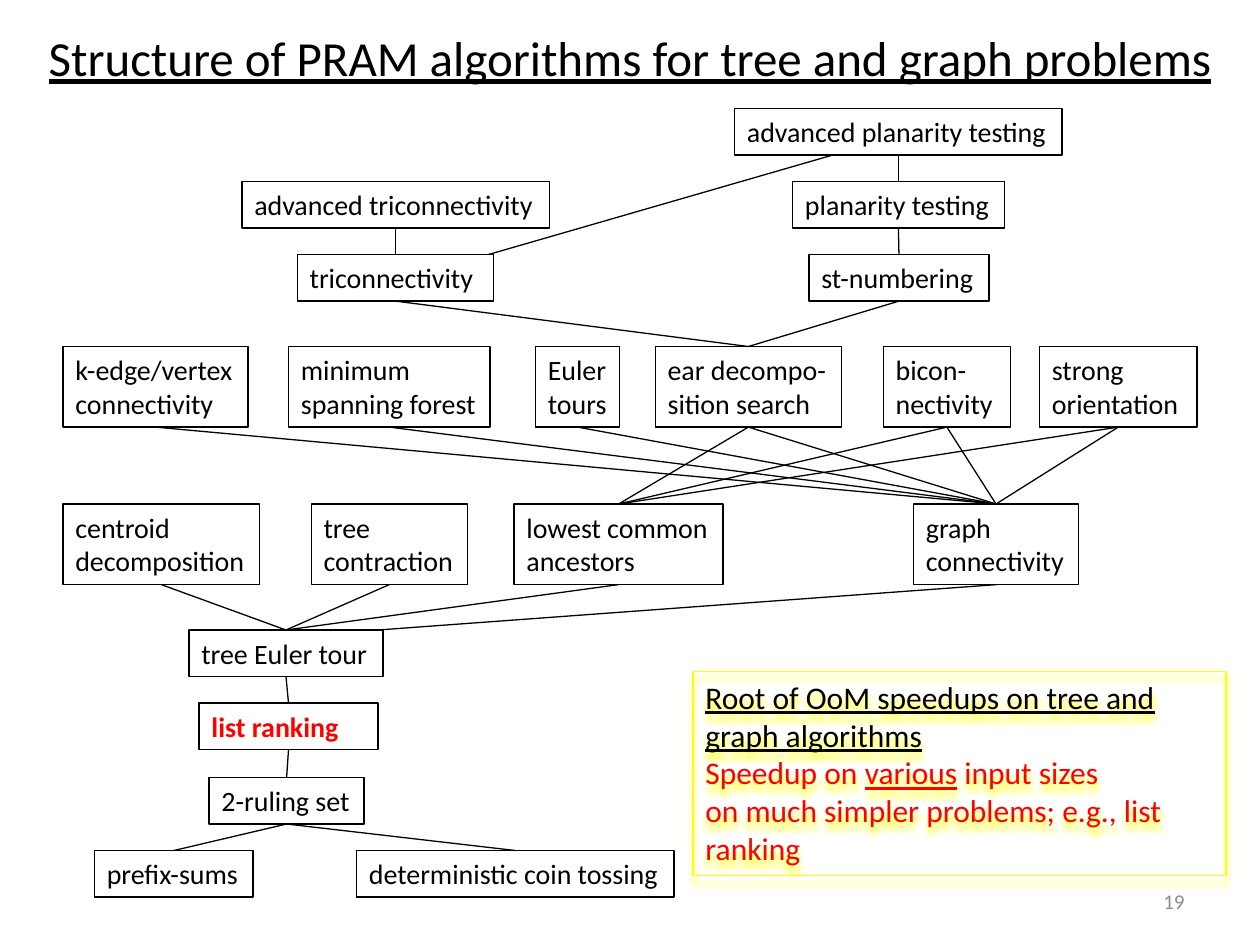
from lxml import etree
from pptx import Presentation
from pptx.dml.color import RGBColor
from pptx.enum import shapes, text
from pptx.oxml import ns
from pptx.util import Inches, Pt

BLACK, WHITE, RED, YELLOW, GRAY = "000000", "FFFFFF", "FF0000", "FFFF00", "8C8C8C"
TITLE = "Structure of PRAM algorithms for tree and graph problems"
ROWS = [
    (0.86, 0.37, [("advplan", "advanced planarity testing", 5.83, 2.6)]),
    (1.44, 0.37, [("advtri", "advanced triconnectivity", 1.92, 2.44),
                  ("plan", "planarity testing", 6.29, 1.68)]),
    (2.02, 0.37, [("tri", "triconnectivity", 2.36, 1.56),
                  ("st", "st-numbering", 6.42, 1.43)]),
    (2.75, 0.64, [("kedge", "k-edge/vertex\nconnectivity", 0.5, 1.47),
                  ("forest", "minimum\vspanning forest", 2.29, 1.6),
                  ("tours", "Euler\vtours", 4.25, 0.67),
                  ("ear", "ear decompo-\vsition search", 5.2, 1.48),
                  ("bicon", "bicon-\vnectivity", 7.01, 1.01),
                  ("strong", "strong\vorientation", 8.25, 1.25)]),
    (4, 0.64, [("centroid", "centroid\vdecomposition", 0.5, 1.56),
               ("tree", "tree\vcontraction", 2.47, 1.24),
               ("lca", "lowest common\vancestors", 4.08, 1.66),
               ("graph", "graph\vconnectivity", 7.25, 1.31)]),
    (5, 0.37, [("tour", "tree Euler tour", 1.5, 1.54)]),
    (5.58, 0.37, [("rank", "list ranking", 1.58, 1.42)]),
    (6.17, 0.37, [("ruling", "2-ruling set", 1.66, 1.23)]),
    (6.75, 0.37, [("sums", "prefix-sums", 0.75, 1.26),
                  ("coin", "deterministic coin tossing", 2.83, 2.52)]),
]
LINKS = {
    "advplan": ["plan"], "advtri": ["tri"], "plan": ["st"],
    "tri": ["ear"], "st": ["ear"],
    "kedge": ["graph"], "forest": ["graph"], "tours": ["graph"],
    "ear": ["graph", "lca"], "bicon": ["graph", "lca"], "strong": ["graph", "lca"],
    "centroid": ["tour"], "tree": ["tour"], "lca": ["tour"],
    "tour": ["rank"], "rank": ["ruling"], "ruling": ["sums", "coin"],
}
SLANTS = [(7.91, 4.64, 3, 5), (6.75, 1.19, 3.67, 2.08)]
NOTE = [
    [("Root of OoM speedups on tree and graph algorithms", BLACK, True)],
    [("Speedup on ", RED, False), ("various", RED, True), (" input sizes", RED, False)],
    [("on much simpler problems; e.g., list ranking", RED, False)],
]
TOP, BOTTOM = 0, 2


def hue(code):
    return RGBColor.from_string(code)


def style(run, size, color, bold=None, under=None):
    font = run.font
    font.name, font.size, font.bold, font.underline = "Calibri", Pt(size), bold, under
    font.color.rgb = hue(color)


def add_box(slide, spot, edge, fill=None):
    box = slide.shapes.add_shape(shapes.MSO_SHAPE.RECTANGLE, *map(Inches, spot))
    box.shadow.inherit = False
    box.line.color.rgb = hue(edge)
    box.line.width = Pt(0.75)
    if fill:
        box.fill.solid()
        box.fill.fore_color.rgb = hue(fill)
    else:
        box.fill.background()
    box.text_frame.word_wrap = True
    box.text_frame.vertical_anchor = text.MSO_ANCHOR.TOP
    return box


def add_node(slide, label, spot, hot):
    box = add_box(slide, spot, BLACK, WHITE)
    box.text_frame.text = label
    for para in box.text_frame.paragraphs:
        para.alignment = text.PP_ALIGN.LEFT
        for run in para.runs:
            style(run, 16, RED if hot else BLACK, bold=hot)
    return box


def add_line(slide, ends=(0, 0, 0, 0)):
    line = slide.shapes.add_connector(shapes.MSO_CONNECTOR.STRAIGHT, *map(Inches, ends))
    line.line.color.rgb = hue(BLACK)
    line.line.width = Pt(0.75)
    etree.SubElement(line._element.spPr, ns.qn("a:effectLst"))
    return line


def add_note(slide):
    note = add_box(slide, (5.5, 5.33, 4.23, 1.62), YELLOW)
    glow = note._element.spPr.find(ns.qn("a:effectLst"))
    shade = etree.SubElement(glow, ns.qn("a:outerShdw"), blurRad=str(Pt(4)),
                             dist=str(Pt(4)), dir="5400000", rotWithShape="0")
    etree.SubElement(shade, ns.qn("a:srgbClr"), val=YELLOW)
    frame = note.text_frame
    for i, parts in enumerate(NOTE):
        para = frame.add_paragraph() if i else frame.paragraphs[0]
        para.alignment = text.PP_ALIGN.LEFT
        for words, color, under in parts:
            run = para.add_run()
            run.text = words
            style(run, 18, color, under=under)


def add_title(slide):
    title = slide.shapes.title
    title.left, title.top, title.width, title.height = map(Inches, (0, 0.17, 10, 0.57))
    frame = title.text_frame
    frame.text = TITLE
    frame.word_wrap = True
    frame.auto_size = text.MSO_AUTO_SIZE.NONE
    frame.vertical_anchor = text.MSO_ANCHOR.TOP
    frame.paragraphs[0].alignment = text.PP_ALIGN.CENTER
    style(frame.paragraphs[0].runs[0], 28, BLACK, under=True)


def add_number(slide):
    frame = slide.shapes.add_textbox(*map(Inches, (7.17, 6.95, 2.33, 0.4))).text_frame
    frame.text = "19"
    frame.word_wrap = True
    frame.vertical_anchor = text.MSO_ANCHOR.MIDDLE
    frame.paragraphs[0].alignment = text.PP_ALIGN.RIGHT
    style(frame.paragraphs[0].runs[0], 12, GRAY)


def main():
    """Build the slide of dependencies among PRAM algorithms."""
    deck = Presentation()
    deck.slide_width, deck.slide_height = Inches(10), Inches(7.5)
    slide = deck.slides.add_slide(deck.slide_layouts[5])
    add_title(slide)
    for ends in SLANTS:
        add_line(slide, ends)
    nodes = {}
    for top, height, items in ROWS:
        for key, label, left, width in items:
            nodes[key] = add_node(slide, label, (left, top, width, height), key == "rank")
    for upper, lowers in LINKS.items():
        for lower in lowers:
            line = add_line(slide)
            line.begin_connect(nodes[upper], BOTTOM)
            line.end_connect(nodes[lower], TOP)
    add_note(slide)
    add_number(slide)
    deck.save("out.pptx")


if __name__ == "__main__":
    main()
